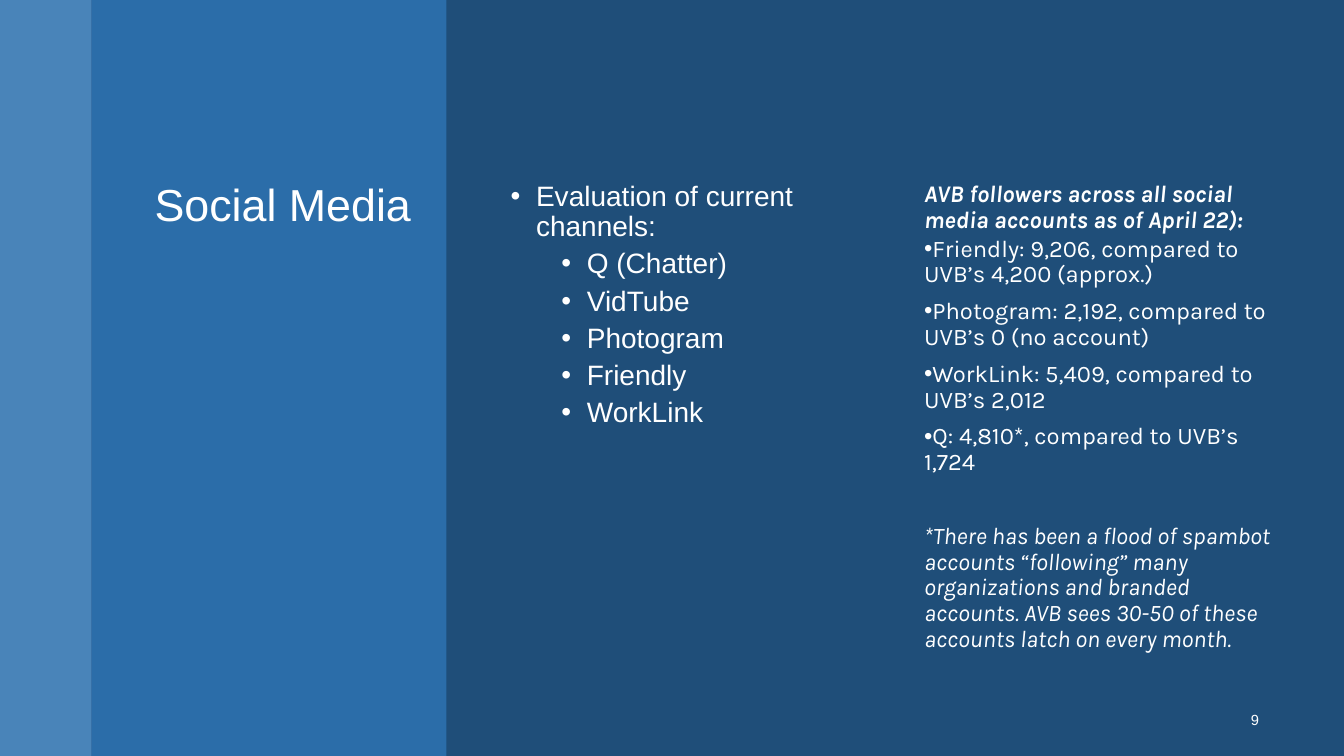
from pptx import Presentation
from pptx.dml.color import RGBColor
from pptx.enum.shapes import MSO_SHAPE as SHAPE
from pptx.enum.text import MSO_ANCHOR as ANCHOR, MSO_AUTO_SIZE as FIT, PP_ALIGN as ALIGN
from pptx.oxml.ns import qn
from pptx.util import Cm, Pt
from lxml.etree import SubElement

WIDTH, HEIGHT = 33.87, 19.05
STRIPE_WIDTH, PANEL_WIDTH = 2.31, 8.94
BODY_TOP, BODY_HEIGHT, COLUMN_WIDTH = 4.47, 12.5, 9.5
INDENT = 0.64


def rgb(value):
    return RGBColor.from_string(value)


class Deck:
    background = "1F4E79"
    ink = "FFFFFF"
    font = "Arial"

    def __init__(self):
        self.prs = Presentation()
        self.prs.slide_width, self.prs.slide_height = Cm(WIDTH), Cm(HEIGHT)

    def add_slide(self):
        self.slide = self.prs.slides.add_slide(self.prs.slide_layouts[5])
        fill = self.slide.background.fill
        fill.solid()
        fill.fore_color.rgb = rgb(self.background)

    def band(self, left, width, color, opacity):
        sp = self.slide.shapes.add_shape(SHAPE.RECTANGLE, Cm(left), 0, Cm(width), Cm(HEIGHT))
        sp.shadow.inherit = False
        sp.line.fill.background()
        sp.fill.solid()
        sp.fill.fore_color.rgb = rgb(color)
        tint = sp.element.spPr.find(qn("a:solidFill"))[0]
        SubElement(tint, qn("a:alpha"), val=str(opacity * 1000))

    def title(self, text, left, top, width, height):
        sp = self.slide.shapes.title
        sp.left, sp.top, sp.width, sp.height = Cm(left), Cm(top), Cm(width), Cm(height)
        sp.element.getparent().append(sp.element)
        tf = sp.text_frame
        tf.auto_size = FIT.NONE
        tf.vertical_anchor = ANCHOR.TOP
        self.paragraph(tf, text, 32, align=ALIGN.RIGHT)

    def text_box(self, left, top, width, height, anchor=ANCHOR.TOP):
        sp = self.slide.shapes.add_textbox(Cm(left), Cm(top), Cm(width), Cm(height))
        tf = sp.text_frame
        tf.word_wrap = True
        tf.vertical_anchor = anchor
        return tf

    def paragraph(self, tf, text, size, font=None, bullet_at=None, level=0, before=0,
                  after=0, align=ALIGN.LEFT, bold=False, italic=False):
        p = tf.add_paragraph() if tf.text else tf.paragraphs[0]
        p.text = text
        p.level = level
        p.alignment = align
        p.line_spacing = 0.9
        p.space_before, p.space_after = Pt(before), Pt(after)
        if bullet_at is not None:
            pPr = p._p.get_or_add_pPr()
            pPr.set("marL", str(Cm(bullet_at)))
            pPr.set("indent", str(-Cm(INDENT)))
            SubElement(pPr, qn("a:buFont"), typeface="Arial")
            SubElement(pPr, qn("a:buChar"), char="•")
        for r in p.runs:
            r.font.name = font or self.font
            r.font.size = Pt(size)
            r.font.bold, r.font.italic = bold, italic
            r.font.color.rgb = rgb(self.ink)


def main():
    deck = Deck()
    deck.add_slide()
    deck.band(0, STRIPE_WIDTH, "5B9BD5", 70)
    deck.band(STRIPE_WIDTH, PANEL_WIDTH, "2E75B6", 80)
    deck.title("Social Media", 2.77, BODY_TOP, 7.85, BODY_HEIGHT)

    channels = deck.text_box(12.62, BODY_TOP, COLUMN_WIDTH, BODY_HEIGHT)
    deck.paragraph(channels, "Evaluation of current channels:", 20, bullet_at=INDENT)
    for name in ("Q (Chatter)", "VidTube", "Photogram", "Friendly", "WorkLink"):
        deck.paragraph(channels, name, 20, bullet_at=3 * INDENT, level=1, before=5)

    followers = deck.text_box(23.04, BODY_TOP, COLUMN_WIDTH, BODY_HEIGHT)
    deck.paragraph(followers, "AVB followers across all social media accounts as of April 22):",
                   17, "Karla", after=2, bold=True, italic=True)
    for count in (
        "Friendly: 9,206, compared to UVB’s 4,200 (approx.)",
        "Photogram: 2,192, compared to UVB’s 0 (no account)",
        "WorkLink: 5,409, compared to UVB’s 2,012",
        "Q: 4,810*, compared to UVB’s 1,724",
    ):
        deck.paragraph(followers, count, 17, "Karla", bullet_at=0, after=8)
    deck.paragraph(
        followers,
        "*There has been a flood of spambot accounts “following” many organizations and "
        "branded accounts. AVB sees 30-50 of these accounts latch on every month.",
        17, "Karla", before=26.4, italic=True)

    number = deck.text_box(29.31, 17.65, 2.67, 1.02, ANCHOR.MIDDLE)
    deck.paragraph(number, "9", 10.5, align=ALIGN.RIGHT)

    deck.prs.save("out.pptx")


if __name__ == "__main__":
    main()
